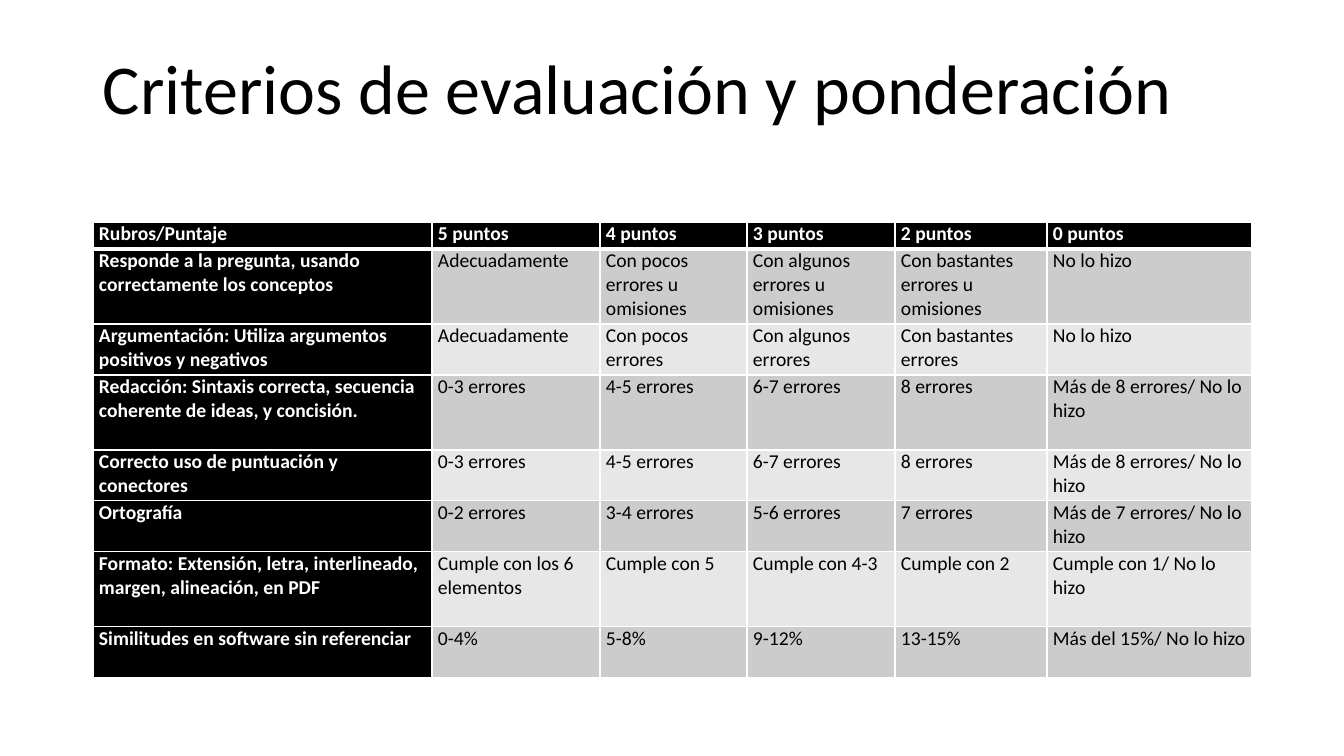
from lxml import etree
from pptx import Presentation
from pptx import util as u
from pptx.dml.color import RGBColor
from pptx.enum import text
from pptx.oxml.ns import qn

BLACK = RGBColor(0x00, 0x00, 0x00)
WHITE = RGBColor(0xFF, 0xFF, 0xFF)
BAND_DARK = RGBColor(0xCC, 0xCC, 0xCC)
BAND_LIGHT = RGBColor(0xE7, 0xE7, 0xE7)

COLUMN_WIDTHS = [339, 168, 147, 148, 152, 205]
ROW_HEIGHTS = [27, 75, 51, 75, 51, 51, 75, 51]
RUBRIC = [
    ["Rubros/Puntaje", "5 puntos", "4 puntos", "3 puntos", "2 puntos", "0 puntos"],
    ["Responde a la pregunta, usando correctamente los conceptos", "Adecuadamente",
     "Con pocos errores u omisiones", "Con algunos errores u omisiones",
     "Con bastantes errores u omisiones", "No lo hizo"],
    ["Argumentación: Utiliza argumentos positivos y negativos", "Adecuadamente",
     "Con pocos errores", "Con algunos errores", "Con bastantes errores", "No lo hizo"],
    ["Redacción: Sintaxis correcta, secuencia coherente de ideas, y concisión.",
     "0-3 errores", "4-5 errores", "6-7 errores", "8 errores",
     "Más de 8 errores/ No lo hizo"],
    ["Correcto uso de puntuación y conectores", "0-3 errores", "4-5 errores",
     "6-7 errores", "8 errores", "Más de 8 errores/ No lo hizo"],
    ["Ortografía", "0-2 errores", "3-4 errores", "5-6 errores", "7 errores",
     "Más de 7 errores/ No lo hizo"],
    ["Formato: Extensión, letra, interlineado, margen, alineación, en PDF",
     "Cumple con los 6 elementos", "Cumple con 5", "Cumple con 4-3", "Cumple con 2",
     "Cumple con 1/ No lo hizo"],
    ["Similitudes en software sin referenciar", "0-4%", "5-8%", "9-12%", "13-15%",
     "Más del 15%/ No lo hizo"],
]


def px(length):
    return u.Emu(round(length * 914400 / 100.8))


class RubricSlide:
    font_name = "Calibri"
    title_size = 50
    cell_size = 14
    cell_margin = 6

    def __init__(self, presentation):
        self.slide = presentation.slides.add_slide(presentation.slide_layouts[6])

    def style(self, paragraph, size, color, bold=False):
        font = paragraph.font
        font.name, font.size, font.bold = self.font_name, u.Pt(size), bold
        font.color.rgb = color

    def title(self, wording, left, top, width, height):
        frame = self.slide.shapes.add_textbox(*map(px, (left, top, width, height))).text_frame
        frame.word_wrap = True
        frame.vertical_anchor = text.MSO_ANCHOR.BOTTOM
        heading = frame.paragraphs[0]
        heading.text = wording
        heading.line_spacing = 0.9
        self.style(heading, self.title_size, BLACK)

    def table(self, rows, left, top, widths, heights):
        table = self.slide.shapes.add_table(
            len(heights), len(widths), px(left), px(top),
            px(sum(widths)), px(sum(heights))).table
        for column, width in zip(table.columns, widths):
            column.width = px(width)
        for row, height in zip(table.rows, heights):
            row.height = px(height)
        for r, entries in enumerate(rows):
            for c, entry in enumerate(entries):
                self.cell(table.cell(r, c), entry, r, c)

    def cell(self, cell, entry, r, c):
        is_heading = r == 0 or c == 0
        cell.margin_left = cell.margin_right = px(self.cell_margin)
        cell.margin_top = cell.margin_bottom = 0
        cell.fill.solid()
        band = BAND_DARK if r % 2 else BAND_LIGHT
        cell.fill.fore_color.rgb = BLACK if is_heading else band
        paragraph = cell.text_frame.paragraphs[0]
        paragraph.text = entry
        self.style(paragraph, self.cell_size, WHITE if is_heading else BLACK, is_heading)
        self.borders(cell, top=3 if r == 1 else 1, bottom=3 if r == 0 else 1)

    def borders(self, cell, top, bottom):
        """Draw white cell borders; widths are in points."""
        properties = cell._tc.get_or_add_tcPr()
        sides = [("a:lnL", 1), ("a:lnR", 1), ("a:lnT", top), ("a:lnB", bottom)]
        for position, (tag, width) in enumerate(sides):
            line = etree.Element(qn(tag), w=str(u.Pt(width)))
            fill = etree.SubElement(line, qn("a:solidFill"))
            etree.SubElement(fill, qn("a:srgbClr"), val=str(WHITE))
            properties.insert(position, line)


def main():
    presentation = Presentation()
    presentation.slide_width, presentation.slide_height = px(1344), px(756)
    rubric = RubricSlide(presentation)
    rubric.title("Criterios de evaluación y ponderación", 93, 32, 1159, 103)
    rubric.table(RUBRIC, 93, 222, COLUMN_WIDTHS, ROW_HEIGHTS)
    presentation.save("out.pptx")


if __name__ == "__main__":
    main()
